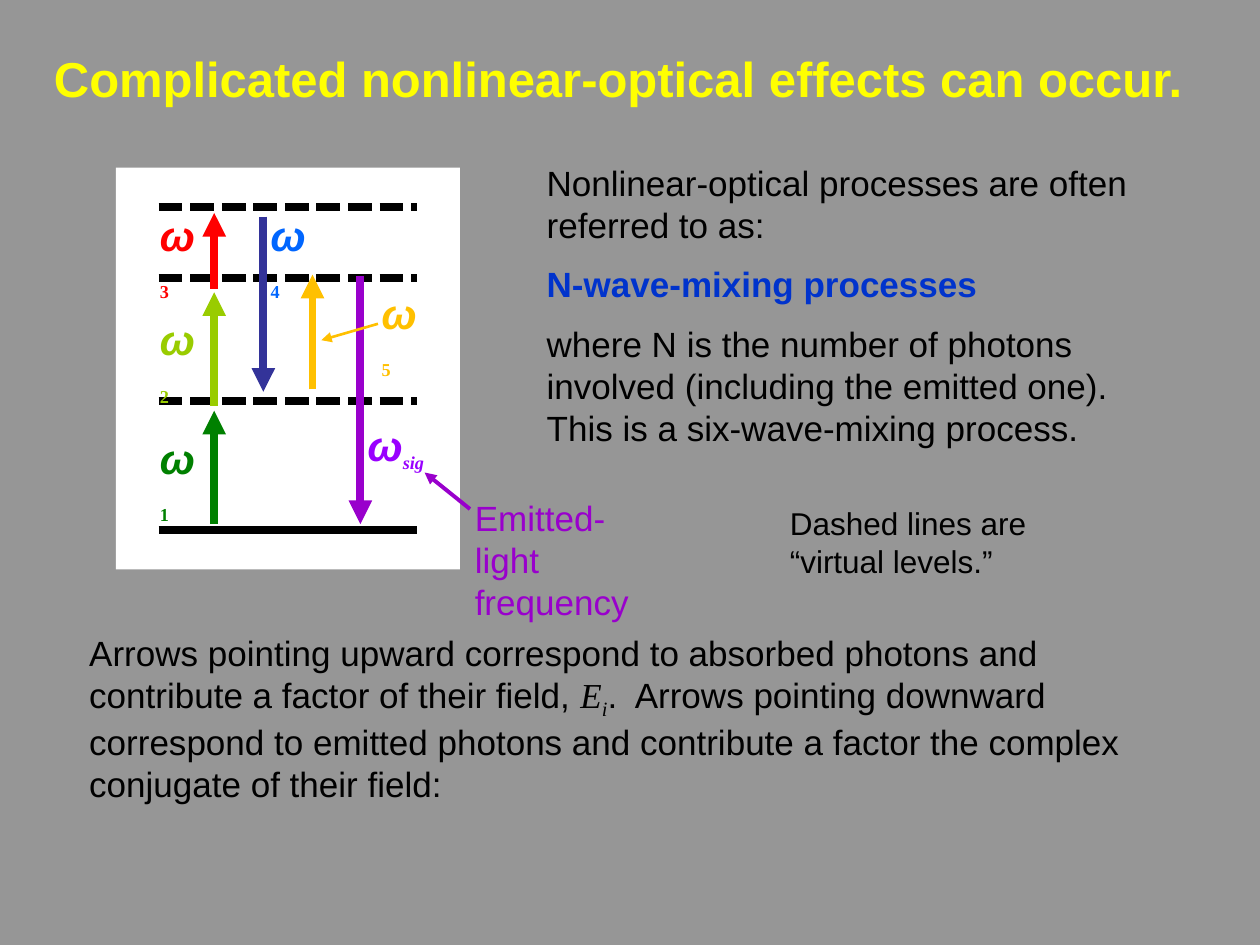
from lxml import etree
from pptx import Presentation
from pptx import util as u
from pptx.dml.color import RGBColor
from pptx.enum import dml, shapes, text
from pptx.oxml.ns import qn

GRAY = RGBColor(0x96, 0x96, 0x96)
WHITE = RGBColor(0xFF, 0xFF, 0xFF)
BLACK = RGBColor(0x00, 0x00, 0x00)
YELLOW = RGBColor(0xFF, 0xFF, 0x00)
BLUE = RGBColor(0x00, 0x33, 0xCC)
INDIGO = RGBColor(0x33, 0x33, 0x99)
SKY = RGBColor(0x00, 0x66, 0xFF)
PURPLE = RGBColor(0x99, 0x00, 0xCC)
VIOLET = RGBColor(0x99, 0x00, 0xFF)
AMBER = RGBColor(0xFF, 0xC0, 0x00)
GREEN = RGBColor(0x00, 0x80, 0x00)
LIME = RGBColor(0x99, 0xCC, 0x00)
RED = RGBColor(0xFF, 0x00, 0x00)
SANS = "Arial"
SERIF = "Times New Roman"

deck = Presentation()
deck.slide_width, deck.slide_height = u.Inches(10), u.Inches(7.5)
page = deck.slides.add_slide(deck.slide_layouts[6])
page.background.fill.solid()
page.background.fill.fore_color.rgb = GRAY


def add_text(left, top, width, height, paragraphs, color, size, gap=0, wrap=True):
    box = page.shapes.add_textbox(*map(u.Inches, (left, top, width, height)))
    frame = box.text_frame
    frame.word_wrap = wrap
    for index, runs in enumerate(paragraphs):
        para = frame.paragraphs[0] if index == 0 else frame.add_paragraph()
        if index:
            para.space_before = u.Pt(gap)
        for words, style in runs:
            span = para.add_run()
            span.text = words
            span.font.name = style.get("font", SANS)
            span.font.size = u.Pt(style.get("size", size))
            span.font.bold = style.get("bold", False)
            span.font.italic = style.get("italic", False)
            span.font.color.rgb = style.get("color", color)
            if style.get("subscript"):
                span._r.get_or_add_rPr().set("baseline", "-25000")
    return frame


def add_line(x1, y1, x2, y2, color, weight=4.5, dashed=False, arrow=True):
    line = page.shapes.add_connector(
        shapes.MSO_CONNECTOR.STRAIGHT, *map(u.Inches, (x1, y1, x2, y2)))
    line.line.color.rgb = color
    line.line.width = u.Pt(weight)
    if dashed:
        line.line.dash_style = dml.MSO_LINE.SQUARE_DOT
    if arrow:
        etree.SubElement(line.line._get_or_add_ln(), qn("a:tailEnd"), type="triangle")
    etree.SubElement(line._element.spPr, qn("a:effectLst"))


title = add_text(0.33, 0.18, 9.33, 0.87,
                 [[("Complicated nonlinear-optical effects can occur.", {"bold": True})]],
                 YELLOW, 28)
title.vertical_anchor = text.MSO_ANCHOR.MIDDLE

add_text(4.24, 1.23, 5.22, 2.43, [
    [("Nonlinear-optical processes are often referred to as:", {})],
    [("N-wave-mixing processes", {"bold": True, "color": BLUE})],
    [("where N is the number of photons involved (including the emitted one). "
      "This is a six-wave-mixing process.", {})],
], BLACK, 20, gap=10)

add_text(3.67, 3.89, 1.74, 0.77, [[("Emitted-light", {})], [("frequency", {})]],
         PURPLE, 20, wrap=False)

panel = page.shapes.add_shape(
    shapes.MSO_SHAPE.RECTANGLE, *map(u.Inches, (0.92, 1.33, 2.73, 3.19)))
panel.shadow.inherit = False
panel.fill.solid()
panel.fill.fore_color.rgb = WHITE
panel.line.fill.background()

for level, dashed in [(4.21, False), (2.21, True), (3.18, True), (1.64, True)]:
    add_line(1.26, level, 3.31, level, BLACK, dashed=dashed, arrow=False)

for x, start, end, color in [
    (2.09, 1.72, 3.11, INDIGO),
    (2.86, 2.19, 4.16, PURPLE),
    (2.48, 3.09, 2.18, AMBER),
    (1.7, 4.16, 3.26, GREEN),
    (1.7, 2.29, 1.69, RED),
    (1.7, 3.22, 2.32, LIME),
]:
    add_line(x, start, x, end, color)

for left, top, width, index, color in [
    (1.17, 3.38, 0.54, "1", GREEN),
    (2.93, 2.23, 0.54, "5", AMBER),
    (2.82, 3.28, 0.7, "sig", VIOLET),
    (2.05, 1.61, 0.54, "4", SKY),
    (1.17, 1.61, 0.54, "3", RED),
    (1.17, 2.44, 0.54, "2", LIME),
]:
    add_text(left, top, width, 0.5, [[
        ("ω", {"bold": True, "italic": True}),
        (index, {"bold": True, "italic": index == "sig", "font": SERIF,
                 "size": 18, "subscript": True}),
    ]], color, 24)

add_line(3, 2.57, 2.55, 2.7, AMBER, 1.5)
add_line(3.73, 4.04, 3.37, 3.75, PURPLE, 2.25)

add_text(6.17, 3.95, 2.82, 0.71, [[("Dashed lines are “virtual levels.”", {})]], BLACK, 18)

add_text(0.61, 4.96, 8.84, 1.53, [[
    ("Arrows pointing upward correspond to absorbed photons and "
     "contribute a factor of their field, ", {}),
    ("E", {"font": SERIF, "italic": True}),
    ("i", {"font": SERIF, "italic": True, "subscript": True}),
    (".  Arrows pointing downward correspond to emitted photons and "
     "contribute a factor the complex conjugate of their field:", {}),
]], BLACK, 20)

deck.save("out.pptx")
